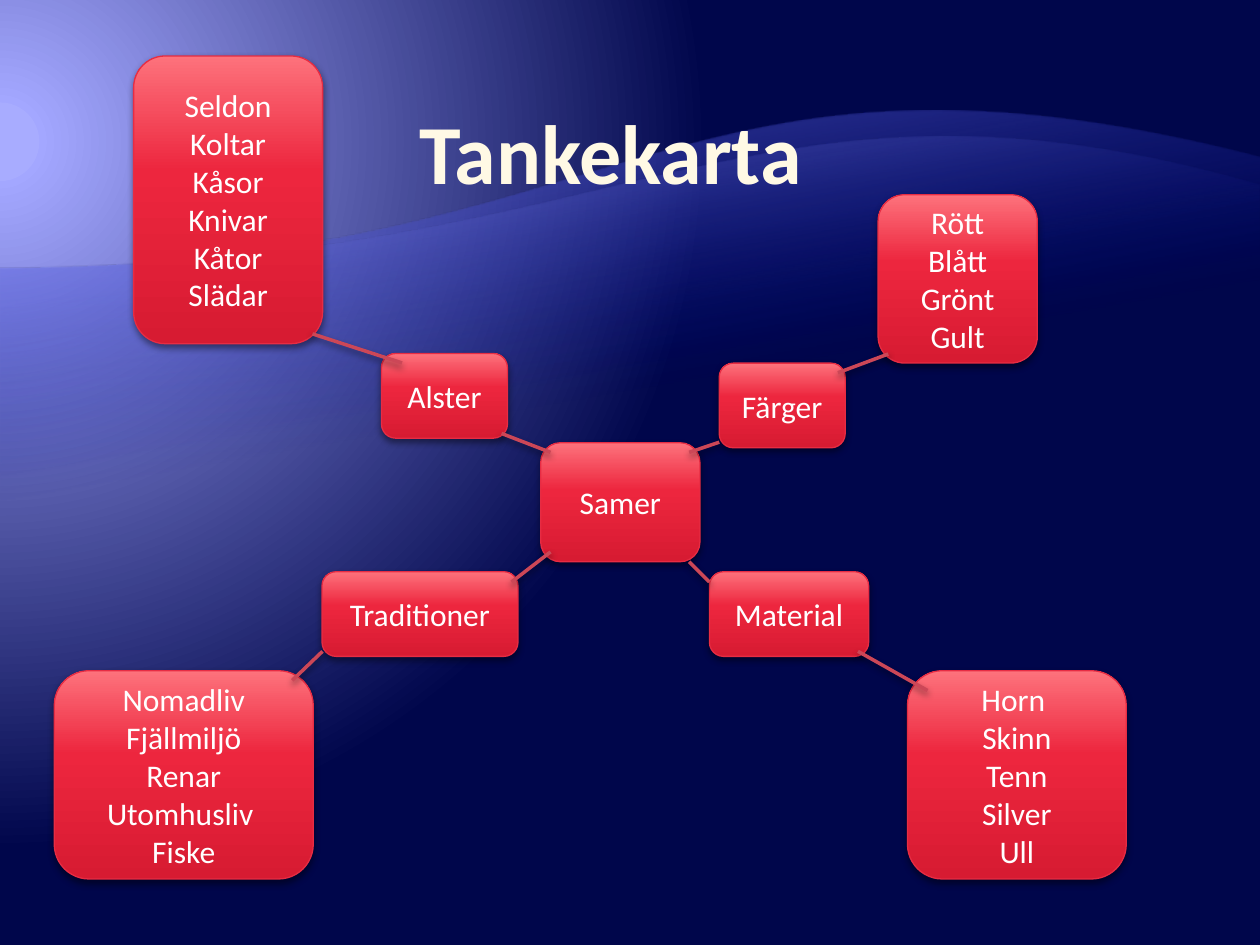
import pptx
import pptx.util
import pptx.dml.color
import pptx.enum.shapes
import pptx.enum.text
import pptx.oxml
import pptx.oxml.ns

Pt = pptx.util.Pt
rgb = pptx.dml.color.RGBColor.from_string
text = pptx.enum.text
kinds = pptx.enum.shapes
names = pptx.oxml.ns.nsdecls("a")


def grad(root, stops, aim):
    marks = "".join(
        f'<a:gs pos="{pos * 1000}"><a:srgbClr val="{hue}">'
        f'<a:alpha val="{alpha * 1000}"/></a:srgbClr></a:gs>'
        for pos, hue, alpha in stops)
    fill = pptx.oxml.parse_xml(
        f'<a:gradFill {names} rotWithShape="1"><a:gsLst>{marks}</a:gsLst>{aim}</a:gradFill>')
    root.replace(root.find(pptx.oxml.ns.qn("a:noFill")), fill)


def put(item, form):
    for key, val in form.items():
        setattr(item, key, val)


shade = (f'<a:effectLst {names}><a:outerShdw blurRad="{Pt(4)}" dist="{Pt(2)}" '
         'dir="5400000" rotWithShape="0"><a:srgbClr val="000000">'
         '<a:alpha val="43000"/></a:srgbClr></a:outerShdw></a:effectLst>')

deck = pptx.Presentation()
put(deck, {"slide_width": Pt(720), "slide_height": Pt(540)})
slide = deck.slides.add_slide(deck.slide_layouts[5])
shapes = slide.shapes

slide.background.fill.background()
grad(slide.background._cSld.bg.bgPr,
     [(5, "A8ACFF", 100), (5, "A3A7FF", 100), (90, "00064B", 100)],
     '<a:path path="circle"><a:fillToRect l="20000" t="30000" r="135000" b="100000"/></a:path>')

waves = [
    (90, 527.8, (360, 153.4), (384.5, 3.6), "797FFF", 55),
    (105.8, 458.6, (360, 153.4), (430.6, 22.3), "A3A7FF", 30),
]
for top, base, one, two, hue, alpha in waves:
    pen = shapes.build_freeform(Pt(720), Pt(base))
    pen.add_line_segments([(Pt(0), Pt(base)), (Pt(0), Pt(153.4)), (Pt(720), Pt(top))])
    wave = pen.convert_to_shape()
    wave.shadow.inherit = False
    wave.line.fill.background()
    wave.fill.background()
    grad(wave._element.spPr, [(65, "000D9E", 0), (100, hue, alpha)],
         '<a:lin ang="15600000" scaled="0"/>')
    side = wave._element.findall(".//" + pptx.oxml.ns.qn("a:lnTo"))[2]
    dots = "".join(f'<a:pt x="{Pt(x)}" y="{Pt(y) - Pt(top)}"/>'
                   for x, y in (one, two, (720, top)))
    side.getparent().replace(side, pptx.oxml.parse_xml(
        f'<a:cubicBezTo {names}>{dots}</a:cubicBezTo>'))

title = shapes.title
shapes._spTree.append(title._element)
put(title, {"left": Pt(25), "top": Pt(26), "width": Pt(648), "height": Pt(90)})
title.text = "Tankekarta"
put(title.text_frame, {
    "auto_size": text.MSO_AUTO_SIZE.NONE, "word_wrap": True,
    "vertical_anchor": text.MSO_ANCHOR.BOTTOM,
    "margin_left": 0, "margin_right": 0, "margin_top": Pt(0.7), "margin_bottom": Pt(0.7)})
line = title.text_frame.paragraphs[0]
line.alignment = text.PP_ALIGN.CENTER
put(line.runs[0].font, {"size": Pt(48), "name": "Calibri", "bold": True})
line.runs[0].font.color.rgb = rgb("FFF9E5")

boxes = [
    ("Samer", 309, 253, 91, 68),
    ("Material", 405.4, 326.7, 91, 48.4),
    ("Färger", 411, 207.5, 72, 48.4),
    ("Alster", 218, 202, 72, 48.4),
    ("Traditioner", 184, 326.7, 112, 48.4),
    ("Rött\nBlått\nGrönt\nGult", 501.8, 111.3, 91, 96.2),
    ("Horn \nSkinn\nTenn\nSilver\nUll", 518.6, 383.3, 125, 119),
    ("Nomadliv\nFjällmiljö\nRenar\nUtomhusliv \nFiske", 31, 383.3, 148, 119),
    ("Seldon\nKoltar\nKåsor\nKnivar\nKåtor\nSlädar", 76.4, 32, 108, 164.4),
]
for words, *place in boxes:
    box = shapes.add_shape(kinds.MSO_SHAPE.FLOWCHART_ALTERNATE_PROCESS, *map(Pt, place))
    box.fill.background()
    grad(box._element.spPr, [(0, "D71B32", 100), (60, "ED263E", 100), (100, "FD727C", 100)],
         '<a:lin ang="16200000" scaled="0"/>')
    box.line.color.rgb = rgb("E72C43")
    box.line.width = Pt(0.75)
    box._element.spPr.append(pptx.oxml.parse_xml(shade))
    frame = box.text_frame
    put(frame, {"text": words, "word_wrap": True, "vertical_anchor": text.MSO_ANCHOR.MIDDLE})
    for line in frame.paragraphs:
        line.alignment = text.PP_ALIGN.CENTER
        put(line.runs[0].font, {"size": Pt(18), "name": "Calibri"})
        line.runs[0].font.color.rgb = rgb("FFFFFF")

links = [
    (286.6, 247.7, 314.6, 258.5), (393.8, 258.5, 411, 252.7),
    (393.8, 321, 405.4, 332.6), (292.3, 332.6, 314.6, 315.4),
    (478.8, 213, 507.6, 202.3), (490.3, 372.2, 530, 394.6),
    (167, 388.8, 184.3, 372.2), (178.6, 190.8, 229.7, 207.4),
]
for ends in links:
    link = shapes.add_connector(kinds.MSO_CONNECTOR.STRAIGHT, *map(Pt, ends))
    link.line.color.rgb = rgb("CC4757")
    link.line.width = Pt(2)
    link._element.spPr.append(pptx.oxml.parse_xml(shade))

deck.save("out.pptx")
